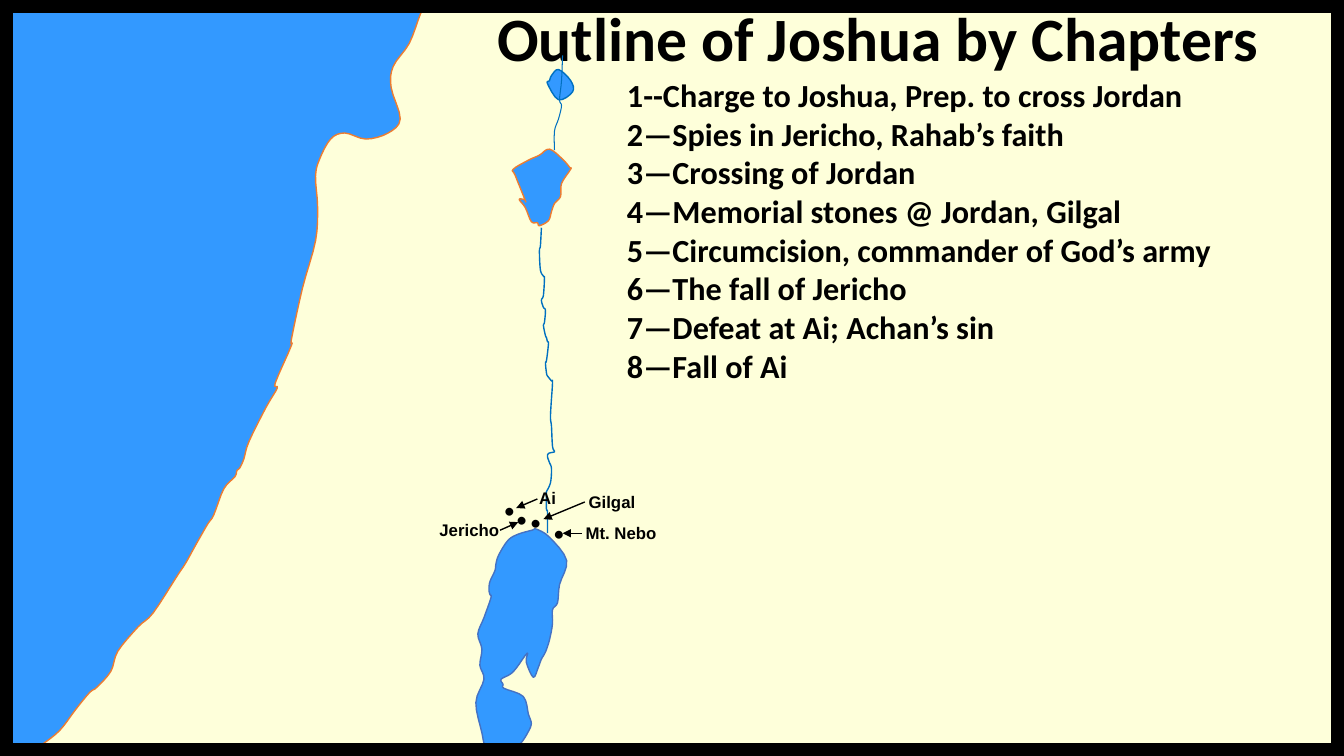
"""Builds a map slide that outlines Joshua by chapters."""
from lxml import etree
from pptx import Presentation
from pptx.dml.color import RGBColor
from pptx.enum.shapes import MSO_CONNECTOR, MSO_SHAPE
from pptx.enum.text import MSO_ANCHOR, PP_ALIGN
from pptx.oxml.ns import qn
from pptx.util import Inches, Pt

STRAIGHT, RECTANGLE = MSO_CONNECTOR.STRAIGHT, MSO_SHAPE.RECTANGLE
TOP, CENTER, LEFT = MSO_ANCHOR.TOP, PP_ALIGN.CENTER, PP_ALIGN.LEFT

SAND = RGBColor(0xFE, 0xFF, 0xDA)
WATER = RGBColor(0x33, 0x99, 0xFF)
RIVER = RGBColor(0x00, 0x70, 0xC0)
SHORE = RGBColor(0xED, 0x7D, 0x31)
DEAD_SEA_SHORE = RGBColor(0x44, 0x72, 0xC4)
BLACK = RGBColor(0, 0, 0)

COAST = [
    (0.24, 7.5), (0.32, 7.46), (0.4, 7.4), (0.59, 7.25), (0.75, 7.04), (0.89, 6.87),
    (0.96, 6.82), (1.1, 6.66), (1.17, 6.46), (1.37, 6.22), (1.52, 6.08), (1.76, 5.71),
    (1.84, 5.59), (1.94, 5.41), (2.06, 5.2), (2.12, 5.11), (2.22, 4.85), (2.33, 4.73),
    (2.35, 4.67), (2.38, 4.64), (2.42, 4.55), (2.47, 4.38), (2.64, 4.04), (2.75, 3.85),
    (2.73, 3.8), (2.89, 3.43), (2.89, 3.37), (3, 2.86), (3.13, 2.39), (3.15, 2.05),
    (3.13, 1.75), (3.17, 1.58), (3.28, 1.38), (3.42, 1.32), (3.63, 1.38), (3.85, 1.32),
    (3.97, 1.18), (3.88, 0.87), (3.9, 0.66), (4.06, 0.43), (4.17, 0.14), (4.24, 0)]
UPPER_LAKE = [
    (5.54, 0.69), (5.47, 0.75), (5.45, 0.8), (5.43, 0.83), (5.54, 0.99), (5.68, 0.91),
    (5.66, 0.8), (5.54, 0.69)]
GALILEE = [
    (5.21, 1.99), (5.11, 1.74), (5.09, 1.68), (5.24, 1.59), (5.35, 1.54), (5.45, 1.48),
    (5.58, 1.58), (5.65, 1.66), (5.66, 1.68), (5.57, 1.82), (5.56, 1.95), (5.5, 2.02),
    (5.47, 2.1), (5.44, 2.19), (5.35, 2.24), (5.33, 2.21), (5.27, 2.2), (5.21, 2.06),
    (5.15, 1.98), (5.2, 1.98), (5.21, 1.99)]
DEAD_SEA = [
    (5.28, 5.26), (5.14, 5.3), (5.04, 5.36), (4.95, 5.5), (4.92, 5.59), (4.91, 5.66),
    (4.86, 5.77), (4.85, 5.85), (4.86, 5.9), (4.87, 5.93), (4.8, 6.13), (4.74, 6.29),
    (4.78, 6.44), (4.76, 6.6), (4.8, 6.74), (4.72, 6.97), (4.78, 7.27), (4.81, 7.39),
    (4.89, 7.43), (4.96, 7.47), (5.06, 7.43), (5.16, 7.38), (5.24, 7.26), (5.27, 7.18),
    (5.25, 7.11), (5.24, 7.08), (5.19, 6.91), (5, 6.83), (4.99, 6.79), (4.97, 6.74),
    (5.06, 6.69), (5.12, 6.63), (5.23, 6.48), (5.22, 6.57), (5.29, 6.72), (5.34, 6.62),
    (5.37, 6.54), (5.41, 6.47), (5.45, 6.35), (5.48, 6.19), (5.48, 6.05), (5.53, 5.98),
    (5.55, 5.8), (5.62, 5.56), (5.45, 5.33), (5.32, 5.25), (5.28, 5.26)]
JORDAN = [
    (5.37, 2.26), (5.36, 2.44), (5.35, 2.49), (5.36, 2.68), (5.39, 2.74), (5.4, 2.76),
    (5.39, 2.93), (5.37, 2.98), (5.39, 3.05), (5.41, 3.08), (5.4, 3.2), (5.39, 3.23),
    (5.41, 3.33), (5.42, 3.35), (5.43, 3.39), (5.44, 3.41), (5.42, 3.58), (5.41, 3.6),
    (5.42, 3.7), (5.43, 3.73), (5.47, 3.78), (5.48, 3.8), (5.46, 4.12), (5.47, 4.23),
    (5.48, 4.43), (5.5, 4.48), (5.47, 4.49), (5.44, 4.5), (5.43, 4.53), (5.45, 4.59),
    (5.47, 4.65), (5.46, 4.79), (5.42, 4.88), (5.42, 4.9), (5.42, 5.05), (5.43, 5.08),
    (5.43, 5.29)]
UPPER_JORDAN = [
    (5.58, 0.55), (5.57, 0.8), (5.55, 0.99), (5.57, 1.05), (5.54, 1.18), (5.5, 1.3),
    (5.5, 1.49)]
PLACES = [
    ("Mt. Nebo", (5.71, 5.14, 0.95), (5.39, 5.1), (5.77, 5.29, 5.58, 5.29)),
    ("Gilgal", (5.74, 4.83, 0.67), (5.16, 4.99), (5.8, 4.98, 5.39, 5.15)),
    ("Jericho", (4.26, 5.11, 0.82), (5.02, 4.96), (4.96, 5.26, 5.14, 5.18)),
    ("Ai", (5.25, 4.79, 0.46), (4.9, 4.87), (5.33, 4.95, 5.12, 5.04))]
CHAPTERS = [
    "1--Charge to Joshua, Prep. to cross Jordan",
    "2—Spies in Jericho, Rahab’s faith",
    "3—Crossing of Jordan",
    "4—Memorial stones @ Jordan, Gilgal",
    "5—Circumcision, commander of God’s army",
    "6—The fall of Jericho",
    "7—Defeat at Ai; Achan’s sin",
    "8—Fall of Ai"]


def smooth(points, steps=4):
    """Return points on a Catmull-Rom curve through the given points."""
    closed = points[0] == points[-1]
    before = points[-2] if closed else points[0]
    after = points[1] if closed else points[-1]
    padded = [before, *points, after]
    curve = [points[0]]
    for a, b, c, d in zip(padded, padded[1:], padded[2:], padded[3:]):
        for step in range(1, steps + 1):
            t = step / steps
            curve.append(tuple(
                (2 * q + (r - p) * t + (2 * p - 5 * q + 4 * r - s) * t ** 2
                 + (3 * q - p - 3 * r + s) * t ** 3) / 2
                for p, q, r, s in zip(a, b, c, d)))
    return curve


def add_outline(slide, left, top, points, line_color, width=1, fill=None):
    """Draw a filled water body, or an open river when no fill is given."""
    corners = [(Inches(left + x), Inches(top + y)) for x, y in points]
    builder = slide.shapes.build_freeform(*corners[0])
    builder.add_line_segments(corners[1:], close=fill is not None)
    outline = builder.convert_to_shape()
    outline.shadow.inherit = False
    if fill is None:
        outline.fill.background()
    else:
        outline.fill.solid()
        outline.fill.fore_color.rgb = fill
    outline.line.color.rgb = line_color
    outline.line.width = Pt(width)


def add_run(paragraph, text, size, font, bold=True):
    """Add one black run to a paragraph."""
    run = paragraph.add_run()
    run.text = text
    run.font.size, run.font.name, run.font.bold = Pt(size), font, bold
    run.font.color.rgb = BLACK


def add_text(slide, left, top, width, height):
    """Add a wrapping text box and return its frame."""
    frame = slide.shapes.add_textbox(
        Inches(left), Inches(top), Inches(width), Inches(height)).text_frame
    frame.word_wrap = True
    return frame


def add_arrow(slide, x1, y1, x2, y2):
    """Draw a thin black arrow."""
    arrow = slide.shapes.add_connector(
        STRAIGHT, Inches(x1), Inches(y1), Inches(x2), Inches(y2))
    arrow.line.color.rgb = BLACK
    arrow.line.width = Pt(1)
    etree.SubElement(arrow.line._get_or_add_ln(), qn("a:tailEnd"), type="triangle")
    etree.SubElement(arrow._element.spPr, qn("a:effectLst"))


def add_waters(slide, left, top, height):
    """Draw the sea, the lakes and the Jordan on the map."""
    sea = smooth(COAST) + [(0, 0), (0, height)]
    add_outline(slide, left, top, sea, SHORE, fill=WATER)
    for lake, shore in ((UPPER_LAKE, RIVER), (GALILEE, SHORE), (DEAD_SEA, DEAD_SEA_SHORE)):
        add_outline(slide, left, top, smooth(lake), shore, fill=WATER)
    add_outline(slide, left, top, smooth(JORDAN), RIVER)
    add_outline(slide, left, top, smooth(UPPER_JORDAN), RIVER, 0.75)


def add_places(slide, left, top):
    """Mark each place with a dot, a label and an arrow."""
    for name, (label_x, label_y, width), (dot_x, dot_y), (x1, y1, x2, y2) in PLACES:
        label = add_text(slide, left + label_x, top + label_y, width, 0.3)
        add_run(label.paragraphs[0], name, 12, "Arial")
        dot = add_text(slide, left + dot_x, top + dot_y, 0.3, 0.37)
        add_run(dot.paragraphs[0], "•", 16, "Calibri", bold=False)
        add_arrow(slide, left + x1, top + y1, left + x2, top + y2)


def add_chapters(slide, left, top, width, height):
    """Place the title with the chapter list indented below it."""
    title_height, indent = 0.75, 1.93
    title = slide.shapes.title
    title.left, title.top = Inches(left), Inches(top)
    title.width, title.height = Inches(width), Inches(title_height)
    heading = title.text_frame
    heading.margin_top = heading.margin_bottom = 0
    heading.vertical_anchor = TOP
    heading.paragraphs[0].alignment = CENTER
    heading.paragraphs[0].line_spacing = 1.0
    add_run(heading.paragraphs[0], "Outline of Joshua by Chapters", 44, "Calibri")
    frame = add_text(slide, left + indent, top + title_height, width - indent,
                     height - title_height)
    frame.margin_top = 0
    for number, chapter in enumerate(CHAPTERS):
        paragraph = frame.add_paragraph() if number else frame.paragraphs[0]
        paragraph.alignment = LEFT
        add_run(paragraph, chapter, 23, "Calibri")


def add_frame(slide, left, top, width, height):
    """Draw the thick black border."""
    border = slide.shapes.add_shape(
        RECTANGLE, Inches(left), Inches(top), Inches(width), Inches(height))
    border.shadow.inherit = False
    border.fill.background()
    border.line.color.rgb = BLACK
    border.line.width = Pt(18)


def main():
    """Build and save the slide."""
    width, height = 13.33, 7.5
    deck = Presentation()
    deck.slide_width, deck.slide_height = Inches(width), Inches(height)
    slide = deck.slides.add_slide(deck.slide_layouts[5])
    slide.background.fill.solid()
    slide.background.fill.fore_color.rgb = SAND
    add_waters(slide, 0, 0, height)
    add_places(slide, 0, 0)
    add_chapters(slide, 4.19, 0, 9.04, 3.89)
    add_frame(slide, 0, 0, width, height)
    deck.save("out.pptx")


if __name__ == "__main__":
    main()
